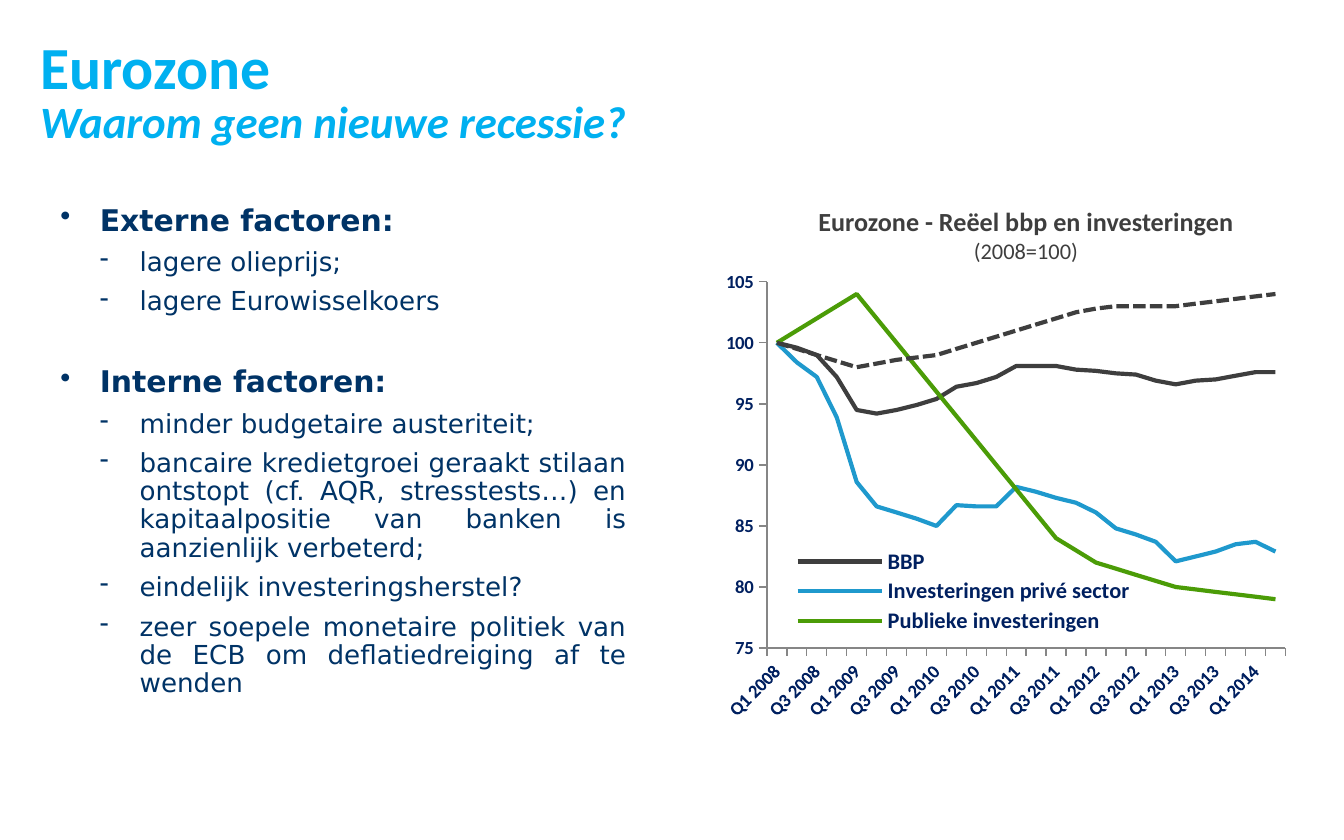
from lxml import etree
from pptx import Presentation
from pptx.chart.data import CategoryChartData
from pptx.dml.color import RGBColor
from pptx.enum.chart import XL_CHART_TYPE, XL_LEGEND_POSITION, XL_TICK_MARK
from pptx.enum.dml import MSO_LINE
from pptx.enum.text import MSO_ANCHOR, PP_ALIGN
from pptx.oxml.ns import qn
from pptx.util import Cm, Pt

LINE_CHART = XL_CHART_TYPE.LINE
LEGEND_RIGHT = XL_LEGEND_POSITION.RIGHT
TICK_OUTSIDE = XL_TICK_MARK.OUTSIDE
DASHED = MSO_LINE.SQUARE_DOT
TOP, MIDDLE = MSO_ANCHOR.TOP, MSO_ANCHOR.MIDDLE
LEFT, CENTER, JUSTIFY = PP_ALIGN.LEFT, PP_ALIGN.CENTER, PP_ALIGN.JUSTIFY

SKY = RGBColor(0x00, 0xB0, 0xF0)
INK = RGBColor(0x00, 0x33, 0x66)
NAVY = RGBColor(0x00, 0x20, 0x60)
CHARCOAL = RGBColor(0x3E, 0x3E, 0x3E)
BLUE = RGBColor(0x1F, 0x99, 0xCD)
GREEN = RGBColor(0x4B, 0x9C, 0x07)
GREY = RGBColor(0x86, 0x86, 0x86)

HEADING_FONT = "Calibri"
BODY_FONT = "DejaVu Sans"

FACTORS = [
    ("Externe factoren:", ["lagere olieprijs;", "lagere Eurowisselkoers"]),
    ("Interne factoren:", [
        "minder budgetaire austeriteit;",
        "bancaire kredietgroei geraakt stilaan ontstopt (cf. AQR, stresstests…) "
        "en kapitaalpositie van banken is aanzienlijk verbeterd;",
        "eindelijk investeringsherstel?",
        "zeer soepele monetaire politiek van de ECB om deflatiedreiging af te wenden",
    ]),
]

QUARTERS = [f"Q{index % 4 + 1} {2008 + index // 4}" for index in range(26)]
SERIES = [
    ("BBP", CHARCOAL, None,
     [100, 99.6, 99, 97.2, 94.5, 94.2, 94.5, 94.9, 95.4, 96.4, 96.7, 97.2, 98.1,
      98.1, 98.1, 97.8, 97.7, 97.5, 97.4, 96.9, 96.6, 96.9, 97, 97.3, 97.6, 97.6]),
    ("Investeringen privé sector", BLUE, None,
     [100, 98.4, 97.2, 93.9, 88.6, 86.6, 86.1, 85.6, 85, 86.7, 86.6, 86.6, 88.2,
      87.8, 87.3, 86.9, 86.1, 84.8, 84.3, 83.7, 82.1, 82.5, 82.9, 83.5, 83.7, 82.9]),
    ("Publieke investeringen", GREEN, None,
     [100, 101, 102, 103, 104, 102, 100, 98, 96, 94, 92, 90, 88,
      86, 84, 83, 82, 81.5, 81, 80.5, 80, 79.8, 79.6, 79.4, 79.2, 79]),
    ("", CHARCOAL, DASHED,
     [100, 99.5, 99, 98.5, 98, 98.3, 98.6, 98.8, 99, 99.5, 100, 100.5, 101,
      101.5, 102, 102.5, 102.8, 103, 103, 103, 103, 103.2, 103.4, 103.6, 103.8, 104]),
]


def add_text_frame(slide, left, top, width, height, anchor=TOP):
    shape = slide.shapes.add_textbox(Cm(left), Cm(top), Cm(width), Cm(height))
    frame = shape.text_frame
    frame.word_wrap = True
    frame.vertical_anchor = anchor
    return frame


def write_paragraph(frame, text, size, color, font=HEADING_FONT, bold=False,
                    italic=False, align=LEFT, spacing=1.0, before=0, after=0,
                    bullet=None, indent=0):
    first = frame.paragraphs[0]
    paragraph = frame.add_paragraph() if first.runs else first
    paragraph.alignment = align
    paragraph.line_spacing = spacing
    paragraph.space_before = Pt(before)
    paragraph.space_after = Pt(after)
    if bullet:
        properties = paragraph._p.get_or_add_pPr()
        properties.set("marL", str(Cm(indent)))
        properties.set("indent", str(-Cm(0.75)))
        etree.SubElement(properties, qn("a:buChar")).set("char", bullet)
    run = paragraph.add_run()
    run.text = text
    run.font.name = font
    run.font.size = Pt(size)
    run.font.bold = bold
    run.font.italic = italic
    run.font.color.rgb = color


def add_title(slide, left, top, width, height):
    frame = add_text_frame(slide, left, top, width, height, anchor=MIDDLE)
    frame.margin_top = frame.margin_bottom = 0
    write_paragraph(frame, "Eurozone", 32, SKY, bold=True, spacing=0.85)
    write_paragraph(frame, "Waarom geen nieuwe recessie?", 24, SKY,
                    bold=True, italic=True, spacing=0.85)


def add_factors(slide, left, top, width, height):
    frame = add_text_frame(slide, left, top, width, height)
    shared = dict(color=INK, font=BODY_FONT, align=JUSTIFY, spacing=0.9, after=3)
    for index, (heading, points) in enumerate(FACTORS):
        write_paragraph(frame, heading, 16, bold=True, bullet="•", indent=0.75,
                        before=24 if index else 0, **shared)
        for point in points:
            write_paragraph(frame, point, 14, bullet="-", indent=1.5, before=3, **shared)


def set_layout(parent, index, inner=False, **box):
    for existing in parent.findall(qn("c:layout")):
        parent.remove(existing)
    layout = etree.Element(qn("c:layout"))
    parent.insert(index, layout)
    manual = etree.SubElement(layout, qn("c:manualLayout"))
    values = {"layoutTarget": "inner"} if inner else {}
    values.update(xMode="edge", yMode="edge", **box)
    for name, value in values.items():
        etree.SubElement(manual, qn(f"c:{name}")).set("val", str(value))


def format_axis(axis):
    axis.has_major_gridlines = False
    axis.major_tick_mark = TICK_OUTSIDE
    axis.format.line.color.rgb = GREY
    axis.format.line.width = Pt(0.75)
    axis.tick_labels.font.size = Pt(10)
    axis.tick_labels.font.bold = True


def format_legend(chart):
    chart.has_legend = True
    legend = chart.legend
    legend.position = LEGEND_RIGHT
    legend.include_in_layout = False
    legend.font.size = Pt(12)
    legend.font.bold = True
    element = legend._element
    entry = etree.Element(qn("c:legendEntry"))
    etree.SubElement(entry, qn("c:idx")).set("val", str(len(SERIES) - 1))
    etree.SubElement(entry, qn("c:delete")).set("val", "1")
    element.insert(1, entry)
    set_layout(element, 2, x=0.17, y=0.59, w=0.56, h=0.2)


def add_investment_chart(slide, left, top, width, height):
    data = CategoryChartData(number_format="0")
    data.categories = QUARTERS
    for name, _, _, values in SERIES:
        data.add_series(name, values)
    chart = slide.shapes.add_chart(LINE_CHART, Cm(left), Cm(top), Cm(width),
                                   Cm(height), data).chart
    chart.has_title = False
    chart.font.name = HEADING_FONT
    chart.font.size = Pt(10)
    chart.font.bold = True
    chart.font.color.rgb = NAVY
    plot = chart.plots[0]
    plot.vary_by_categories = False
    for series, (_, color, dash, _) in zip(plot.series, SERIES):
        series.smooth = False
        line = series.format.line
        line.color.rgb = color
        line.width = Pt(2.25)
        if dash:
            line.dash_style = dash

    value_axis, category_axis = chart.value_axis, chart.category_axis
    format_axis(value_axis)
    value_axis.minimum_scale = 75
    value_axis.maximum_scale = 105
    value_axis.major_unit = 5
    format_axis(category_axis)
    category = category_axis._element
    category.find(qn("c:txPr")).find(qn("a:bodyPr")).set("rot", "-2700000")
    skip = etree.Element(qn("c:tickLblSkip"))
    skip.set("val", "2")
    category.find(qn("c:noMultiLvlLbl")).addprevious(skip)

    set_layout(category.getparent(), 0, inner=True, x=0.135, y=0.017, w=0.83, h=0.797)
    format_legend(chart)


def add_chart_title(slide, left, top, width, height):
    frame = add_text_frame(slide, left, top, width, height)
    write_paragraph(frame, "Eurozone - Reëel bbp en investeringen", 14, CHARCOAL,
                    bold=True, align=CENTER)
    write_paragraph(frame, "(2008=100)", 12, CHARCOAL, align=CENTER)


def main():
    presentation = Presentation()
    presentation.slide_width = Cm(25.4)
    presentation.slide_height = Cm(15.88)
    slide = presentation.slides.add_slide(presentation.slide_layouts[6])
    add_investment_chart(slide, 12.9, 5.13, 11.81, 8.74)
    add_chart_title(slide, 13.69, 3.76, 11.4, 1.37)
    add_title(slide, 0.51, 0.75, 22.86, 2.06)
    add_factors(slide, 0.89, 3.76, 11.2, 10.16)
    presentation.save("out.pptx")


if __name__ == "__main__":
    main()
